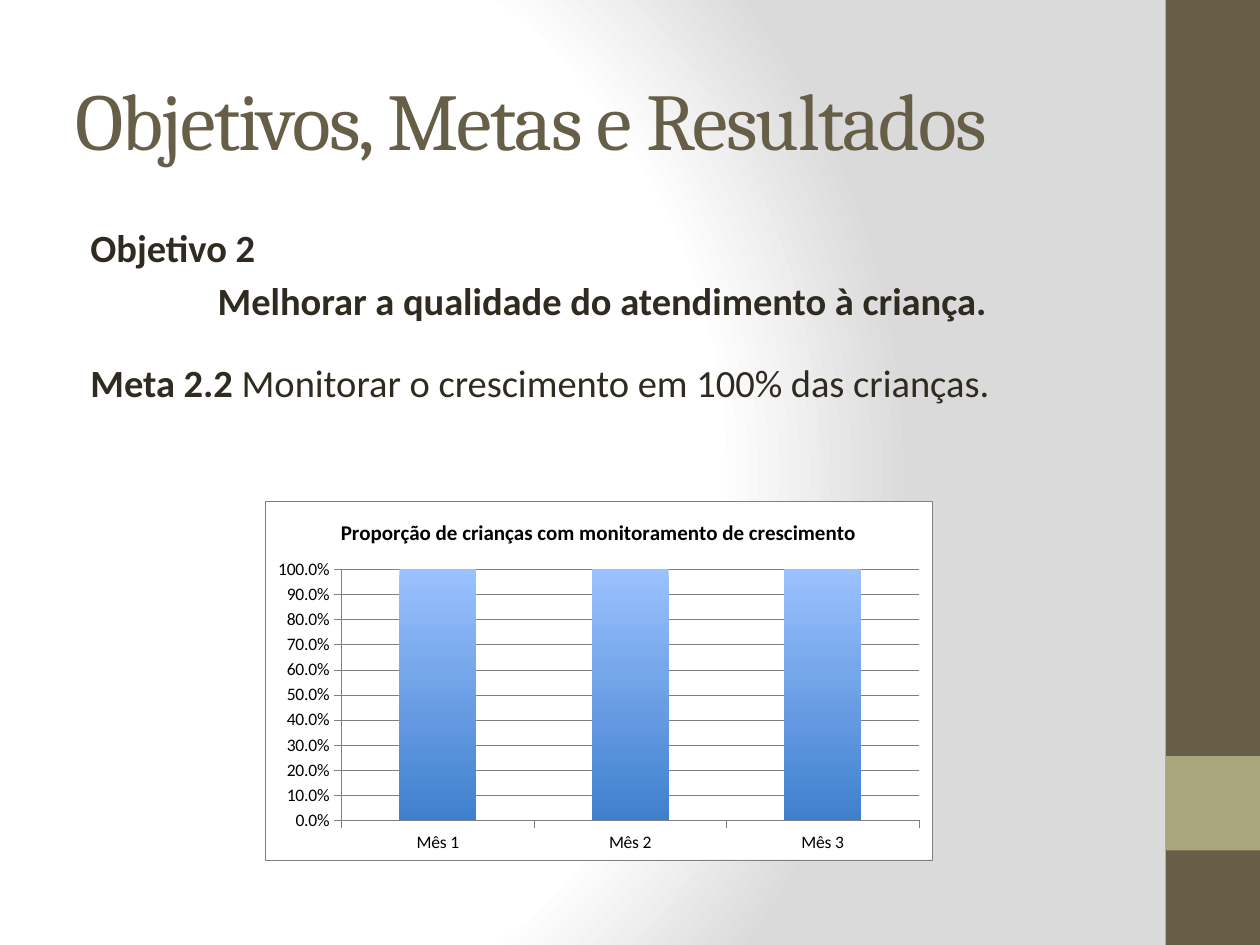
from dataclasses import dataclass

from pptx import Presentation
from pptx.chart.data import CategoryChartData
from pptx.dml.color import RGBColor
from pptx.enum.chart import XL_CHART_TYPE as ChartType, XL_TICK_MARK as TickMark
from pptx.enum.shapes import MSO_SHAPE as ShapeKind
from pptx.enum.text import MSO_ANCHOR as Anchor
from pptx.oxml import parse_xml
from pptx.oxml.ns import nsdecls
from pptx.util import Inches, Pt


@dataclass(frozen=True)
class Theme:
    """Colours, fonts and type sizes of the slide."""
    brown: str = "675E47"
    olive: str = "A9A57C"
    ink: str = "2F2B20"
    black: str = "000000"
    white: str = "FFFFFF"
    shade: str = "DADADA"
    grey: str = "808080"
    bar_top: str = "9BC1FF"
    bar_bottom: str = "3F80CD"
    heading_font: str = "Cambria"
    body_font: str = "Calibri"
    title_size: float = 46
    body_size: float = 22
    chart_title_size: float = 12
    chart_size: float = 10
    hairline: float = 0.25


@dataclass(frozen=True)
class Box:
    """A rectangle on the slide."""
    left: int
    top: int
    width: int
    height: int

    def share(self, left, top, width, height):
        """Return the box at the given shares of this one."""
        return Box(int(self.left + left * self.width), int(self.top + top * self.height),
                   int(width * self.width), int(height * self.height))

    def frame(self):
        """Return the four lengths in the order python-pptx takes them."""
        return self.left, self.top, self.width, self.height


THEME = Theme()


def format_font(font, size, color=THEME.black, name=THEME.body_font, bold=False):
    """Set the look of any font object."""
    font.size, font.name, font.bold = Pt(size), name, bold
    font.color.rgb = RGBColor.from_string(color)


def write(paragraph, text, spacing=None, **style):
    """Add a formatted run of text to a paragraph."""
    run = paragraph.add_run()
    run.text = text
    format_font(run.font, **style)
    if spacing is not None:
        run.font._element.set("spc", str(int(spacing * 100)))


def add_text_frame(slide, box, anchor=Anchor.TOP):
    """Add a wrapping text box and return its frame."""
    frame = slide.shapes.add_textbox(*box.frame()).text_frame
    frame.word_wrap, frame.vertical_anchor = True, anchor
    return frame


def paint_background(slide):
    """Fill the slide with a round gradient."""
    stops = "".join(
        f'<a:gs pos="{percent * 1000}"><a:srgbClr val="{color}"/></a:gs>'
        for percent, color in ((0, THEME.white), (75, THEME.white), (100, THEME.shade)))
    slide.element.cSld.insert(0, parse_xml(
        f'<p:bg {nsdecls("p", "a")}><p:bgPr><a:gradFill rotWithShape="1">'
        f'<a:gsLst>{stops}</a:gsLst><a:path path="circle">'
        '<a:fillToRect l="20000" t="50000" r="100000" b="50000"/></a:path>'
        '</a:gradFill><a:effectLst/></p:bgPr></p:bg>'))


def add_side_band(slide, box):
    """Place the band and its lighter block."""
    for area, color in ((box, THEME.brown), (box.share(0, 0.8, 1, 0.1), THEME.olive)):
        shape = slide.shapes.add_shape(ShapeKind.RECTANGLE, *area.frame())
        shape.shadow.inherit = False
        shape.fill.solid()
        shape.fill.fore_color.rgb = RGBColor.from_string(color)
        shape.line.fill.background()


def add_title(slide, box):
    """Place the slide title."""
    frame = add_text_frame(slide, box, Anchor.MIDDLE)
    write(frame.paragraphs[0], "Objetivos, Metas e Resultados", spacing=-1,
          size=THEME.title_size, color=THEME.brown, name=THEME.heading_font)


def add_goals(slide, box):
    """Place the objective and its target."""
    goals = (
        (0.12, 4.4, (("Objetivo 2", True),)),
        (1.13, 4.4, (("Melhorar a qualidade do atendimento à criança.", True),)),
        (0.12, 20.5, (("Meta 2.2", True),
                      (" Monitorar o crescimento em 100% das crianças.", False))),
    )
    frame = add_text_frame(slide, box)
    for index, (indent, space, runs) in enumerate(goals):
        paragraph = frame.add_paragraph() if index else frame.paragraphs[0]
        paragraph.space_before = Pt(space)
        properties = paragraph._p.get_or_add_pPr()
        properties.set("marL", str(Inches(indent)))
        properties.set("indent", "0")
        for text, bold in runs:
            write(paragraph, text, size=THEME.body_size, color=THEME.ink, bold=bold)


def area_format(line):
    """Return white chart area properties with the given line."""
    return parse_xml(
        f'<c:spPr {nsdecls("c", "a")}><a:solidFill><a:srgbClr val="{THEME.white}"/>'
        f'</a:solidFill>{line}</c:spPr>')


def format_line(line):
    """Make a chart line a grey hairline."""
    line.width = Pt(THEME.hairline)
    line.color.rgb = RGBColor.from_string(THEME.grey)


def format_axes(chart):
    """Style both axes and the value gridlines."""
    for axis in (chart.category_axis, chart.value_axis):
        axis.major_tick_mark, axis.minor_tick_mark = TickMark.OUTSIDE, TickMark.NONE
        format_font(axis.tick_labels.font, THEME.chart_size)
        format_line(axis.format.line)
    value_axis = chart.value_axis
    value_axis.minimum_scale, value_axis.maximum_scale = 0, 1
    value_axis.major_unit = 0.1
    value_axis.tick_labels.number_format = "0.0%"
    value_axis.tick_labels.number_format_is_linked = False
    value_axis.has_major_gridlines = True
    format_line(value_axis.major_gridlines.format.line)


def add_growth_chart(slide, box):
    """Place the column chart of growth monitoring."""
    title = "Proporção de crianças com monitoramento de crescimento"
    data = CategoryChartData(number_format="0.0%")
    data.categories = [f"Mês {month}" for month in (1, 2, 3)]
    data.add_series(title, (1, 1, 1))
    chart = slide.shapes.add_chart(ChartType.COLUMN_CLUSTERED, *box.frame(), data).chart
    format_font(chart.font, THEME.chart_size)
    chart.has_legend = False
    chart.has_title = True
    chart.chart_title.include_in_layout = False
    write(chart.chart_title.text_frame.paragraphs[0], title,
          size=THEME.chart_title_size, bold=True)
    format_axes(chart)
    plot = chart.plots[0]
    plot.gap_width, plot.vary_by_categories = 150, False
    fill = plot.series[0].format.fill
    fill.gradient()
    fill.gradient_angle = 270
    for stop, position, color in zip(fill.gradient_stops, (0, 1),
                                     (THEME.bar_top, THEME.bar_bottom)):
        stop.position = position
        stop.color.rgb = RGBColor.from_string(color)
    chart_element = chart.element.chart
    chart_element.plotArea.append(area_format("<a:ln><a:noFill/></a:ln>"))
    chart_element.addnext(area_format(
        f'<a:ln w="{Pt(THEME.hairline)}"><a:solidFill><a:srgbClr val="{THEME.grey}"/>'
        '</a:solidFill></a:ln>'))


def main():
    """Build and save the presentation."""
    presentation = Presentation()
    presentation.slide_width, presentation.slide_height = Inches(10), Inches(7.5)
    slide = presentation.slides.add_slide(presentation.slide_layouts[6])
    page = Box(0, 0, presentation.slide_width, presentation.slide_height)
    paint_background(slide)
    add_side_band(slide, page.share(0.925, 0, 0.075, 1))
    add_title(slide, page.share(0.05, 0.04, 0.83, 0.17))
    add_goals(slide, page.share(0.05, 0.23, 0.83, 0.7))
    add_growth_chart(slide, page.share(0.21, 0.53, 0.53, 0.38))
    presentation.save("out.pptx")


if __name__ == "__main__":
    main()
